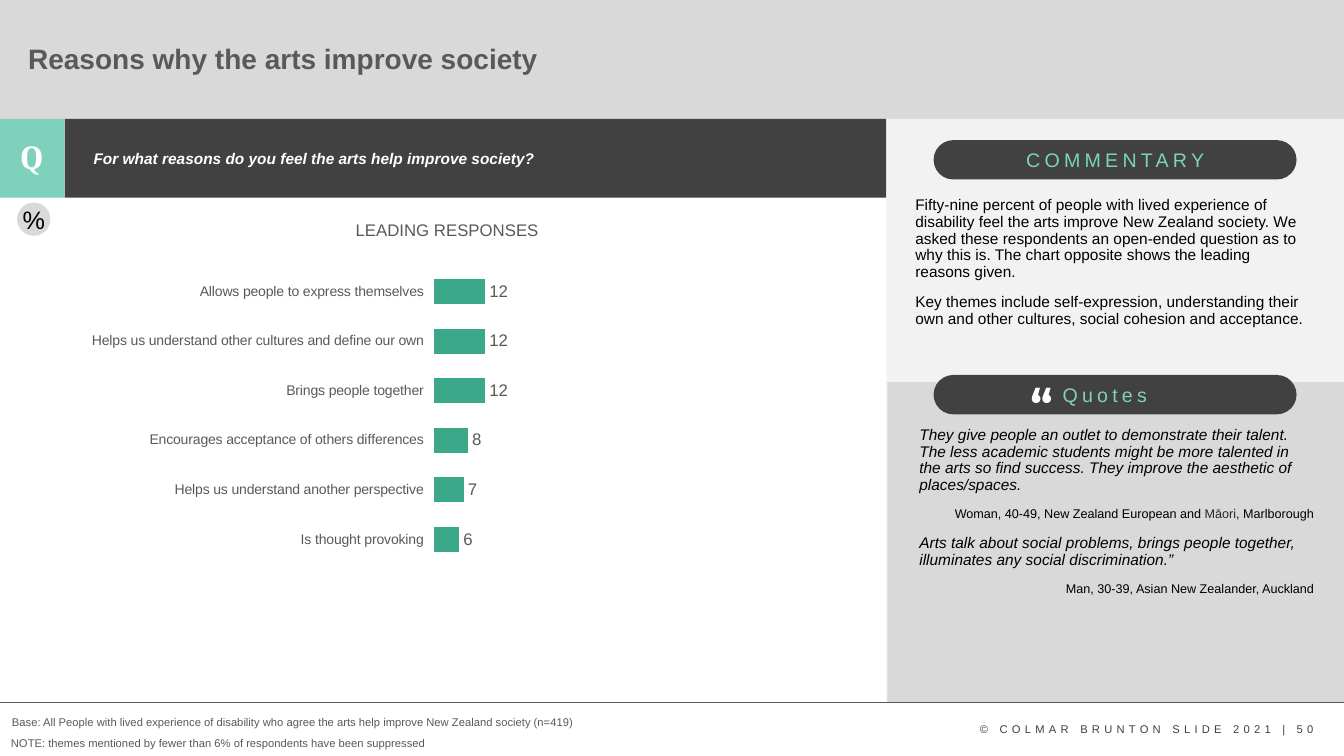
from dataclasses import dataclass
from typing import NamedTuple

from lxml import etree
from pptx import Presentation
from pptx import util as u
from pptx.chart import data as chart_data
from pptx.dml.color import RGBColor
from pptx.enum import chart as chart_enum
from pptx.enum import shapes
from pptx.enum import text as text_enum
from pptx.oxml import parse_xml
from pptx.oxml import ns

PX = 9144  # EMU in one px, 100 px to the inch
ALIGN = text_enum.PP_ALIGN
ANCHOR = text_enum.MSO_ANCHOR
SHAPE = shapes.MSO_SHAPE


@dataclass(frozen=True)
class Theme:
    font: str = "Arial"
    letter_font: str = "Cambria"
    quote_font: str = "Montserrat"
    white: str = "FFFFFF"
    black: str = "000000"
    grey: str = "595959"
    dark: str = "414141"
    credit: str = "404040"
    accent_text: str = "262626"
    band: str = "D9D9D9"
    pale: str = "F2F2F2"
    mint: str = "7ED2BB"
    bar: str = "3AA889"
    title: int = 20
    heading: int = 14
    label: int = 12
    body: int = 11
    axis: int = 10
    attribution: int = 9
    small: int = 8


THEME = Theme()


class Box(NamedTuple):
    left: int
    top: int
    width: int
    height: int

    def emu(self) -> list[int]:
        return [value * PX for value in self]


class Panel(NamedTuple):
    box: Box
    color: str
    kind: int = SHAPE.RECTANGLE


class Quote(NamedTuple):
    words: str
    speaker: list[tuple[str, str]]


class Note(NamedTuple):
    box: Box
    words: str


BACKGROUND = [
    Panel(Box(0, -2, 1333, 120), THEME.band),
    Panel(Box(879, 118, 455, 579), THEME.pale),
    Panel(Box(64, 118, 815, 78), THEME.dark),
    Panel(Box(0, 118, 64, 78), THEME.mint),
    Panel(Box(880, 379, 455, 318), THEME.band),
    Panel(Box(926, 139, 360, 39), THEME.dark, SHAPE.ROUNDED_RECTANGLE),
    Panel(Box(926, 372, 360, 39), THEME.dark, SHAPE.ROUNDED_RECTANGLE),
]
HEADINGS = [Note(Box(1008, 142, 202, 34), "COMMENTARY"), Note(Box(1044, 375, 109, 34), "Quotes")]
FOOTNOTES = [
    Note(Box(2, 705, 715, 24), "Base: All People with lived experience of disability who agree "
         "the arts help improve New Zealand society (n=419)"),
    Note(Box(1, 726, 715, 24),
         "NOTE: themes mentioned by fewer than 6% of respondents have been suppressed"),
]
COMMENTARY = [
    "Fifty-nine percent of people with lived experience of disability feel the arts improve "
    "New Zealand society. We asked these respondents an open-ended question as to why this is. "
    "The chart opposite shows the leading reasons given.",
    "Key themes include self-expression, understanding their own and other cultures, "
    "social cohesion and acceptance.",
]
QUOTES = [
    Quote("They give people an outlet to demonstrate their talent. The less academic students "
          "might be more talented in the arts so find success. They improve the aesthetic of "
          "places/spaces.",
          [("Woman, 40-49, New Zealand European and ", THEME.black),
           ("Māori", THEME.accent_text), (", Marlborough", THEME.black)]),
    Quote("Arts talk about social problems, brings people together, illuminates any social "
          "discrimination.”", [("Man, 30-39, Asian New Zealander, Auckland", THEME.black)]),
]
REASONS = [
    ("Allows people to express themselves", 12),
    ("Helps us understand other cultures and define our own", 12),
    ("Brings people together", 12),
    ("Encourages acceptance of others differences", 8),
    ("Helps us understand another perspective", 7),
    ("Is thought provoking", 6),
    ("", None),
    ("", None),
]


def set_font(font, size: int, color: str, name: str = THEME.font) -> None:
    font.size, font.name = u.Pt(size), name
    font.color.rgb = RGBColor.from_string(color)


def add_panel(slide, panel: Panel):
    shape = slide.shapes.add_shape(panel.kind, *panel.box.emu())
    shape.shadow.inherit = False
    shape.fill.solid()
    shape.fill.fore_color.rgb = RGBColor.from_string(panel.color)
    shape.line.fill.background()
    if panel.kind == SHAPE.ROUNDED_RECTANGLE:
        shape.adjustments[0] = 0.5
    return shape


def write(frame, text, *, size: int, color: str = THEME.black, font: str = THEME.font,
          bold: bool = False, italic: bool = False, align=ALIGN.LEFT,
          line_spacing: float = 1.0, tracking: int = 0) -> None:
    """Add a paragraph; text is a string or a list of (words, color) runs."""
    first = not frame.paragraphs[0].runs
    paragraph = frame.paragraphs[0] if first else frame.add_paragraph()
    paragraph.alignment, paragraph.line_spacing = align, line_spacing
    paragraph.space_before = u.Pt(0 if first else 10)
    for words, run_color in [(text, color)] if isinstance(text, str) else text:
        run = paragraph.add_run()
        run.text = words
        set_font(run.font, size, run_color, font)
        run.font.bold, run.font.italic = bold, italic
        if tracking:
            run.font._element.set("spc", str(tracking * 100))


def add_frame(slide, box: Box, *, wrap: bool = True, anchor=ANCHOR.TOP):
    frame = slide.shapes.add_textbox(*box.emu()).text_frame
    frame.word_wrap, frame.vertical_anchor = wrap, anchor
    return frame


def clear_margins(frame) -> None:
    frame.margin_left = frame.margin_right = frame.margin_top = frame.margin_bottom = 0


def add_rule(slide, top: int) -> None:
    line = slide.shapes.add_connector(
        shapes.MSO_CONNECTOR.STRAIGHT, 0, top * PX, 1333 * PX, top * PX)
    line.line.color.rgb = RGBColor.from_string(THEME.grey)
    line.line.width = u.Pt(0.5)
    etree.SubElement(line._element.spPr, ns.qn("a:effectLst"))


def add_reasons_chart(slide, box: Box) -> None:
    data = chart_data.CategoryChartData()
    data.categories = [reason for reason, _ in REASONS]
    data.add_series("Series 1", [value for _, value in REASONS])
    chart = slide.shapes.add_chart(
        chart_enum.XL_CHART_TYPE.BAR_CLUSTERED, *box.emu(), data).chart
    chart.has_legend = chart.has_title = False
    set_font(chart.font, THEME.axis, THEME.black)

    categories, values = chart.category_axis, chart.value_axis
    categories.reverse_order = True
    categories.format.line.fill.background()
    set_font(categories.tick_labels.font, THEME.axis, THEME.grey)
    values.minimum_scale, values.maximum_scale = 0, 100
    values.has_major_gridlines = values.visible = False

    plot = chart.plots[0]
    plot.gap_width, plot.vary_by_categories = 100, False
    series = plot.series[0]
    series.format.fill.solid()
    series.format.fill.fore_color.rgb = RGBColor.from_string(THEME.bar)
    labels = series.data_labels
    labels.show_value = True
    labels.position = chart_enum.XL_LABEL_POSITION.OUTSIDE_END
    set_font(labels.font, THEME.label, THEME.grey)

    area = chart._chartSpace.chart.plotArea
    for layout in area.findall(ns.qn("c:layout")):
        area.remove(layout)
    fractions = {"x": 0.49, "y": 0.05, "w": 0.51, "h": 0.95}
    parts = '<c:layoutTarget val="inner"/><c:xMode val="edge"/><c:yMode val="edge"/>'
    parts += "".join(f'<c:{key} val="{value}"/>' for key, value in fractions.items())
    area.insert(0, parse_xml(f"<c:layout {ns.nsdecls('c')}><c:manualLayout>{parts}"
                             "</c:manualLayout></c:layout>"))


def main() -> None:
    presentation = Presentation()
    presentation.slide_width, presentation.slide_height = 1333 * PX, 750 * PX
    slide = presentation.slides.add_slide(presentation.slide_layouts[6])

    for panel in BACKGROUND:
        add_panel(slide, panel)
    add_rule(slide, 697)
    add_reasons_chart(slide, Box(18, 244, 841, 414))

    write(add_frame(slide, Box(18, 21, 1119, 78), anchor=ANCHOR.MIDDLE),
          "Reasons why the arts improve society",
          size=THEME.title, color=THEME.grey, bold=True, line_spacing=0.9)
    write(add_frame(slide, Box(8, 130, 47, 50)), "Q", size=24, color=THEME.white,
          font=THEME.letter_font, bold=True, align=ALIGN.CENTER)
    write(add_frame(slide, Box(83, 145, 760, 46)),
          "For what reasons do you feel the arts help improve society?",
          size=THEME.body, color=THEME.white, bold=True, italic=True, line_spacing=0.9)
    write(add_frame(slide, Box(298, 213, 291, 30)), "LEADING RESPONSES",
          size=THEME.label, color=THEME.grey, align=ALIGN.CENTER)

    percent = add_panel(slide, Panel(Box(17, 201, 33, 33), THEME.band, SHAPE.OVAL)).text_frame
    clear_margins(percent)
    percent.word_wrap, percent.vertical_anchor = True, ANCHOR.MIDDLE
    write(percent, "%", size=18, align=ALIGN.CENTER)

    for box, words in HEADINGS:
        write(add_frame(slide, box, wrap=False), words,
              size=THEME.heading, color=THEME.mint, tracking=3)
    quote_mark = add_frame(slide, Box(1022, 389, 76, 32), anchor=ANCHOR.MIDDLE)
    clear_margins(quote_mark)
    write(quote_mark, "“", size=32, color=THEME.white, font=THEME.quote_font,
          bold=True, line_spacing=0.8, tracking=3)

    commentary = add_frame(slide, Box(898, 191, 411, 484))
    for words in COMMENTARY:
        write(commentary, words, size=THEME.body, line_spacing=0.9)
    quotes = add_frame(slide, Box(902, 419, 411, 182))
    for quote in QUOTES:
        write(quotes, quote.words, size=THEME.body, italic=True, line_spacing=0.9)
        write(quotes, quote.speaker, size=THEME.attribution, align=ALIGN.RIGHT, line_spacing=0.9)

    for box, words in FOOTNOTES:
        write(add_frame(slide, box), words, size=THEME.small, color=THEME.grey)
    write(add_frame(slide, Box(962, 712, 361, 24)), "© COLMAR BRUNTON SLIDE 2021 | 50",
          size=THEME.small, color=THEME.credit, tracking=3)
    presentation.save("out.pptx")


if __name__ == "__main__":
    main()
